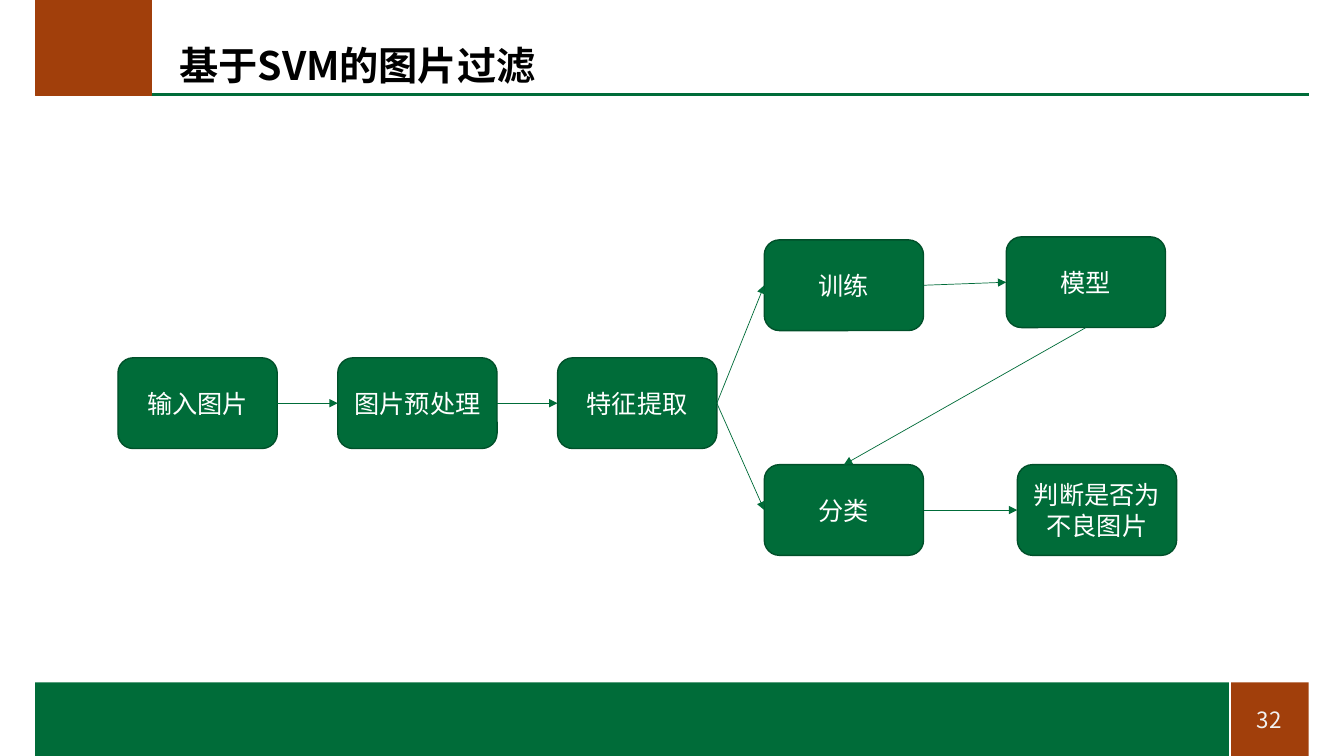
"""Build the slide that shows the SVM image filtering flow."""
import dataclasses

import lxml.etree
import pptx
import pptx.dml.color
import pptx.enum.shapes
import pptx.enum.text
import pptx.oxml.ns
import pptx.util

Inches = pptx.util.Inches
Shapes = pptx.enum.shapes.MSO_SHAPE
Align = pptx.enum.text.PP_ALIGN

FONT = "Noto Sans CJK SC"
GREEN, DARK_GREEN, RUST, WHITE = "006C39", "00502A", "A13F0B", "FFFFFF"
STEP_WIDTH, STEP_HEIGHT = 1.58, 0.9
INPUT_LEFT, INPUT_PITCH, INPUT_TOP = 1.17, 2.18, 3.55
BRANCH_LEFT, CLASSIFY_TOP = 7.58, 4.61
TOP, LEFT, BOTTOM, RIGHT = range(4)


@dataclasses.dataclass(frozen=True)
class Step:
    text: str
    left: float
    top: float


@dataclasses.dataclass(frozen=True)
class Arrow:
    source: str
    target: str
    leave: int = RIGHT
    enter: int = LEFT


@dataclasses.dataclass(frozen=True)
class Block:
    left: float
    top: float
    width: float
    height: float
    fill: str
    line: str | None = None


@dataclasses.dataclass(frozen=True)
class Rule:
    start: tuple[float, float]
    end: tuple[float, float]
    color: str
    weight: float


BLOCKS = [
    Block(12.2, 6.77, 0.78, 0.73, RUST),
    Block(0.35, 0, 1.15, 0.95, RUST, RUST),
    Block(0.35, 6.77, 11.86, 0.73, GREEN),
]
TITLE_RULE = Rule((1.49, 0.94), (12.98, 0.94), GREEN, 2.25)
FOOTER_RULE = Rule((12.2, 6.77), (12.2, 7.5), WHITE, 1)

STEPS = [
    Step(text, INPUT_LEFT + index * INPUT_PITCH, INPUT_TOP)
    for index, text in enumerate(["输入图片", "图片预处理", "特征提取"])
] + [
    Step("训练", BRANCH_LEFT, 2.38),
    Step("模型", 9.98, 2.35),
    Step("分类", BRANCH_LEFT, CLASSIFY_TOP),
    Step("判断是否为不良图片", 10.09, CLASSIFY_TOP),
]
ARROWS = [
    Arrow("输入图片", "图片预处理"),
    Arrow("图片预处理", "特征提取"),
    Arrow("特征提取", "训练"),
    Arrow("特征提取", "分类"),
    Arrow("分类", "判断是否为不良图片"),
    Arrow("训练", "模型"),
    Arrow("模型", "分类", BOTTOM, TOP),
]


def rgb(color: str) -> pptx.dml.color.RGBColor:
    return pptx.dml.color.RGBColor.from_string(color)


def write(box, text: str, *, size: float, color: str, bold: bool = False,
          align=Align.CENTER, spacing: float = 1.0) -> None:
    frame = box.text_frame
    frame.word_wrap = True
    frame.vertical_anchor = pptx.enum.text.MSO_ANCHOR.MIDDLE
    para = frame.paragraphs[0]
    para.alignment = align
    para.line_spacing = spacing
    span = para.add_run()
    span.text = text
    span.font.size = pptx.util.Pt(size)
    span.font.bold = bold
    span.font.color.rgb = rgb(color)
    span.font.name = FONT
    properties = span._r.get_or_add_rPr()
    lxml.etree.SubElement(properties, pptx.oxml.ns.qn("a:ea"), typeface=FONT)


def add_box(page, kind, block: Block):
    box = page.shapes.add_shape(
        kind, Inches(block.left), Inches(block.top),
        Inches(block.width), Inches(block.height))
    box.shadow.inherit = False
    box.fill.solid()
    box.fill.fore_color.rgb = rgb(block.fill)
    if block.line:
        box.line.color.rgb = rgb(block.line)
        box.line.width = pptx.util.Pt(1)
    else:
        box.line.fill.background()
    return box


def add_text(page, left: float, top: float, width: float, height: float,
             text: str, **style) -> None:
    box = page.shapes.add_textbox(
        Inches(left), Inches(top), Inches(width), Inches(height))
    write(box, text, **style)


def add_rule(page, rule: Rule):
    line = page.shapes.add_connector(
        pptx.enum.shapes.MSO_CONNECTOR.STRAIGHT,
        *(Inches(value) for value in rule.start + rule.end))
    line.line.color.rgb = rgb(rule.color)
    line.line.width = pptx.util.Pt(rule.weight)
    lxml.etree.SubElement(line._element.spPr, pptx.oxml.ns.qn("a:effectLst"))
    return line


def add_step(page, step: Step):
    box = add_box(page, Shapes.ROUNDED_RECTANGLE, Block(
        step.left, step.top, STEP_WIDTH, STEP_HEIGHT, GREEN, DARK_GREEN))
    write(box, step.text, size=18, color=WHITE)
    return box


def add_arrow(page, arrow: Arrow, boxes: dict) -> None:
    line = add_rule(page, Rule((0, 0), (1, 1), GREEN, 0.5))
    line.begin_connect(boxes[arrow.source], arrow.leave)
    line.end_connect(boxes[arrow.target], arrow.enter)
    lxml.etree.SubElement(line.line._get_or_add_ln(),
                          pptx.oxml.ns.qn("a:tailEnd"), type="triangle")


def main() -> None:
    deck = pptx.Presentation()
    deck.slide_width, deck.slide_height = Inches(13.33), Inches(7.5)
    page = deck.slides.add_slide(deck.slide_layouts[6])
    add_rule(page, TITLE_RULE)
    for block in BLOCKS:
        add_box(page, Shapes.RECTANGLE, block)
    add_text(page, 12.29, 6.95, 0.6, 0.37, "32", size=16, color="F2F2F2")
    add_rule(page, FOOTER_RULE)
    add_text(page, 1.68, 0.41, 8.22, 0.52, "基于SVM的图片过滤", size=28,
             color="000000", bold=True, align=Align.LEFT, spacing=0.9)
    boxes = {step.text: add_step(page, step) for step in STEPS}
    for arrow in ARROWS:
        add_arrow(page, arrow, boxes)
    deck.save("out.pptx")


if __name__ == "__main__":
    main()
